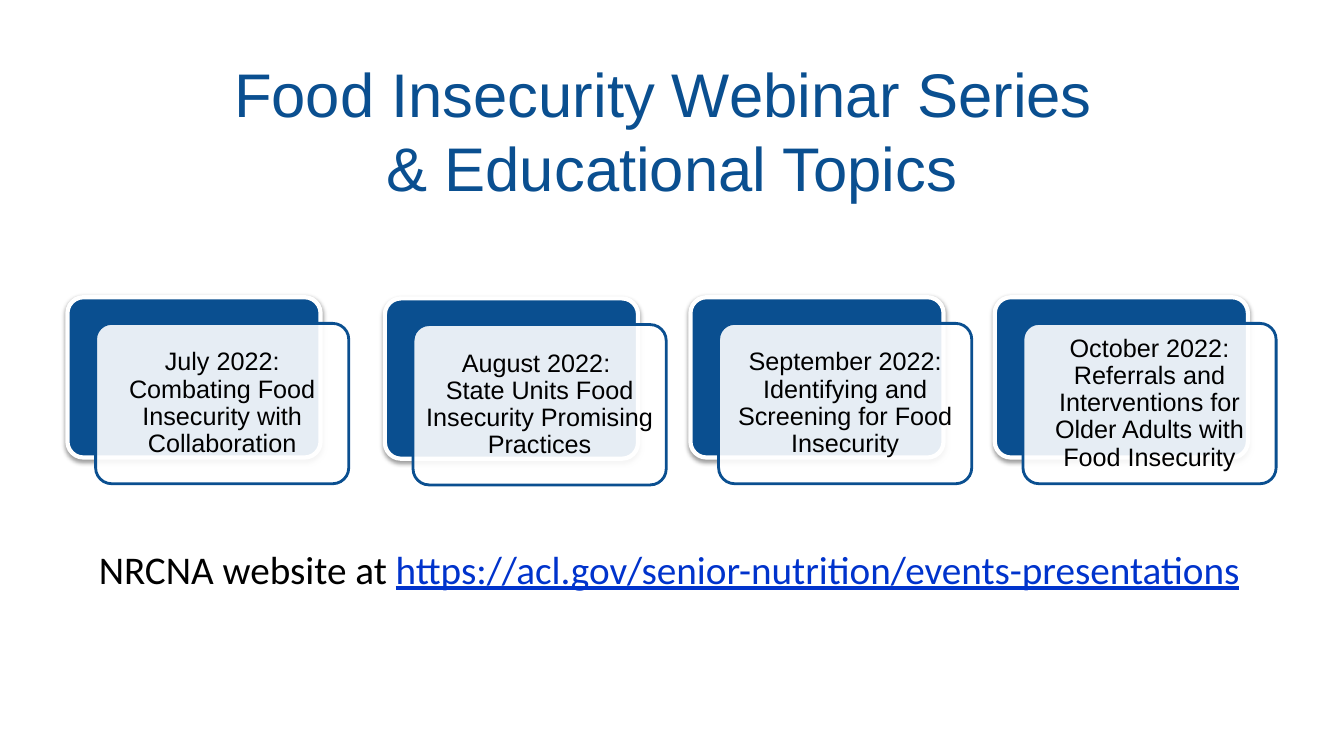
from lxml import etree
from pptx import Presentation
from pptx import util as u
from pptx.dml.color import RGBColor
from pptx.enum import shapes, text
from pptx.oxml import parse_xml
from pptx.oxml.ns import nsdecls, qn

NAVY = RGBColor(0x0A, 0x4F, 0x90)
LINK_BLUE = RGBColor(0x00, 0x33, 0xCC)
BLACK = RGBColor(0, 0, 0)
WHITE = RGBColor(255, 255, 255)

CARD_WIDTH, CARD_HEIGHT = 6.38, 4.04
FRONT_SHIFT_X, FRONT_SHIFT_Y = 0.71, 0.66

WEBINARS = [
    (1.7, 7.49, "July 2022: Combating Food Insecurity with Collaboration"),
    (9.7, 7.52, "August 2022: \vState Units Food Insecurity Promising Practices"),
    (17.4, 7.49, "September 2022: Identifying and Screening for Food Insecurity"),
    (25.07, 7.49, "October 2022:\vReferrals and Interventions for Older Adults with Food Insecurity"),
]


class WebinarSlide:
    def __init__(self, deck):
        self.page = deck.slides.add_slide(deck.slide_layouts[5])
        self.heading_font = "Arial"
        self.body_font = "Calibri"

    def add_span(self, para, words, size, font, color):
        """Append one run; a vertical tab in the words becomes a line break."""
        for index, part in enumerate(words.split("\v")):
            if index:
                para.add_line_break()
            span = para.add_run()
            span.text = part
            span.font.size = u.Pt(size)
            span.font.name = font
            span.font.color.rgb = color
        return span

    def title(self, words):
        box = self.page.shapes.title
        box.left, box.top = u.Cm(1.7), u.Cm(0.76)
        box.width, box.height = u.Cm(30.48), u.Cm(5.03)
        frame = box.text_frame
        frame.auto_size = text.MSO_AUTO_SIZE.NONE
        frame.vertical_anchor = text.MSO_ANCHOR.MIDDLE
        para = frame.paragraphs[0]
        para.alignment = text.PP_ALIGN.CENTER
        self.add_span(para, words, 44, self.heading_font, NAVY)

    def panel(self, left, top, fill, line, line_width):
        box = self.page.shapes.add_shape(
            shapes.MSO_SHAPE.ROUNDED_RECTANGLE,
            u.Cm(left), u.Cm(top), u.Cm(CARD_WIDTH), u.Cm(CARD_HEIGHT))
        box.adjustments[0] = 0.1
        box.shadow.inherit = False
        box.fill.solid()
        box.fill.fore_color.rgb = fill
        box.line.color.rgb = line
        box.line.width = u.Pt(line_width)
        return box

    def drop_shadow(self, box):
        effects = box._element.spPr.find(qn("a:effectLst"))
        effects.append(parse_xml(
            f'<a:outerShdw {nsdecls("a")} blurRad="{u.Pt(3.1)}" dist="{u.Pt(1.6)}" '
            'dir="5400000" rotWithShape="0"><a:srgbClr val="000000">'
            '<a:alpha val="38000"/></a:srgbClr></a:outerShdw>'))

    def card(self, left, top, words):
        """Navy panel with a translucent, captioned panel set off in front."""
        self.drop_shadow(self.panel(left, top, NAVY, WHITE, 3))
        front = self.panel(left + FRONT_SHIFT_X, top + FRONT_SHIFT_Y, WHITE, NAVY, 2)
        color = front._element.spPr.find(qn("a:solidFill")).find(qn("a:srgbClr"))
        etree.SubElement(color, qn("a:alpha")).set("val", "90000")
        frame = front.text_frame
        frame.word_wrap = True
        frame.vertical_anchor = text.MSO_ANCHOR.MIDDLE
        frame.margin_left = frame.margin_right = u.Cm(0.18)
        frame.margin_top = frame.margin_bottom = u.Cm(0.18)
        para = frame.paragraphs[0]
        para.alignment = text.PP_ALIGN.CENTER
        para.line_spacing = 0.9
        self.add_span(para, words, 18, self.heading_font, BLACK)

    def website(self, lead, address):
        box = self.page.shapes.add_textbox(u.Cm(2.24), u.Cm(13.61), u.Cm(29.44), u.Cm(2.82))
        box.text_frame.word_wrap = True
        para = box.text_frame.paragraphs[0]
        self.add_span(para, lead, 28, self.body_font, BLACK)
        span = self.add_span(para, address, 28, self.body_font, LINK_BLUE)
        span.font.underline = True


def main():
    deck = Presentation()
    deck.slide_width, deck.slide_height = u.Cm(33.87), u.Cm(19.05)
    slide = WebinarSlide(deck)
    slide.title("Food Insecurity Webinar Series \v& Educational Topics")
    for left, top, words in WEBINARS:
        slide.card(left, top, words)
    slide.website("NRCNA website at ", "https://acl.gov/senior-nutrition/events-presentations")
    deck.save("out.pptx")


if __name__ == "__main__":
    main()
